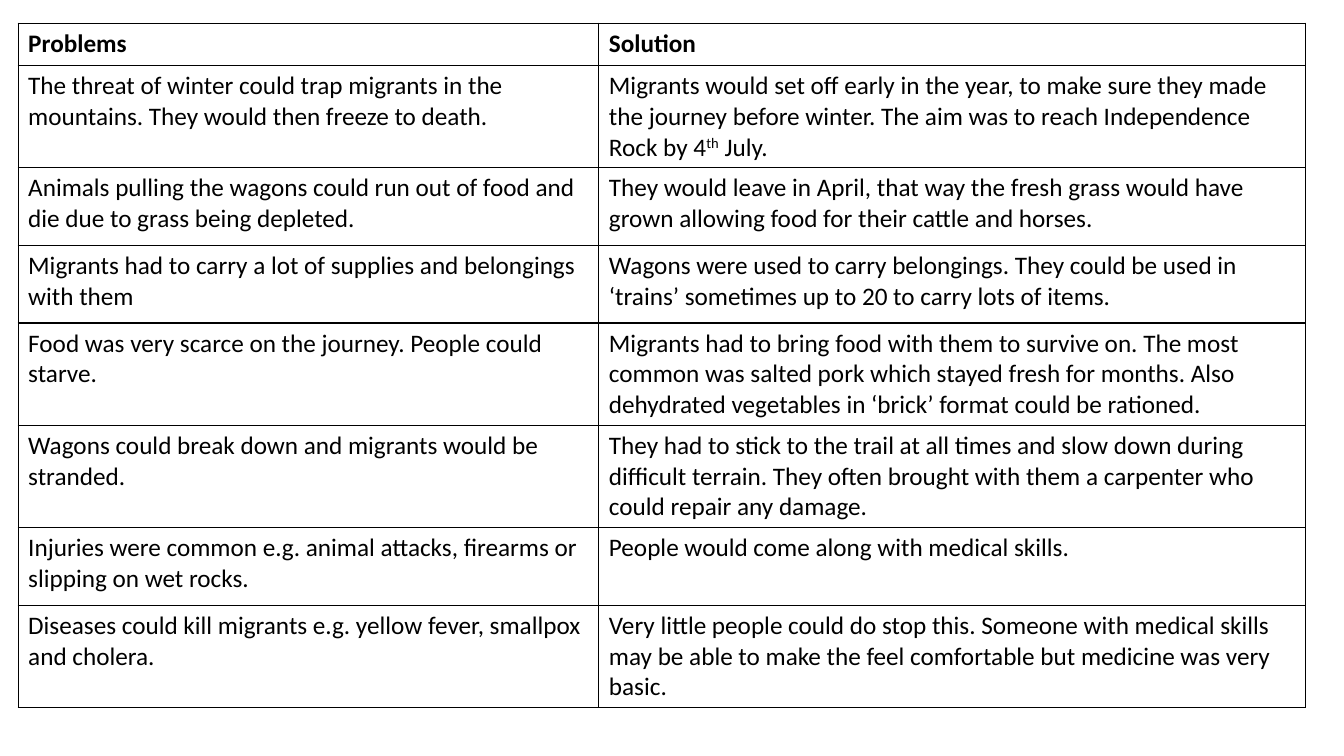
from pptx import Presentation
from pptx.dml.color import RGBColor
from pptx.oxml import parse_xml
from pptx.oxml.ns import nsdecls
from pptx.util import Inches, Pt

HEADER = ("Problems", "Solution")
# A "^" on each side marks superscript text.
JOURNEY = [
    ("The threat of winter could trap migrants in the mountains. They would then freeze to death.",
     "Migrants would set off early in the year, to make sure they made the journey before winter. "
     "The aim was to reach Independence Rock by 4^th^ July."),
    ("Animals pulling the wagons could run out of food and die due to grass being depleted.",
     "They would leave in April, that way the fresh grass would have grown allowing food for "
     "their cattle and horses."),
    ("Migrants had to carry a lot of supplies and belongings with them",
     "Wagons were used to carry belongings. They could be used in ‘trains’ sometimes up to 20 "
     "to carry lots of items."),
    ("Food was very scarce on the journey. People could starve.",
     "Migrants had to bring food with them to survive on. The most common was salted pork which "
     "stayed fresh for months. Also dehydrated vegetables in ‘brick’ format could be rationed."),
    ("Wagons could break down and migrants would be stranded.",
     "They had to stick to the trail at all times and slow down during difficult terrain. They "
     "often brought with them a carpenter who could repair any damage."),
    ("Injuries were common e.g. animal attacks, firearms or slipping on wet rocks.",
     "People would come along with medical skills."),
    ("Diseases could kill migrants e.g. yellow fever, smallpox and cholera.",
     "Very little people could do stop this. Someone with medical skills may be able to make the "
     "feel comfortable but medicine was very basic."),
]
BLACK, WHITE = "000000", "FFFFFF"
LEFT, TOP = 0.18, 0.23
COLUMN_WIDTHS = (5.76, 7.01)
HEADER_HEIGHT, ROW_HEIGHT = 0.42, 0.77
TEXT_FORMAT = {"name": "Calibri", "size": Pt(18)}


def color(hex_value):
    return RGBColor.from_string(hex_value)


def add_borders(cell):
    properties = cell._tc.get_or_add_tcPr()
    for side in ("lnL", "lnR", "lnT", "lnB"):
        properties.append(parse_xml(
            f'<a:{side} {nsdecls("a")} w="{Pt(1)}"><a:solidFill>'
            f'<a:srgbClr val="{BLACK}"/></a:solidFill></a:{side}>'))


def write_cell(cell, text, bold):
    add_borders(cell)
    cell.fill.solid()
    cell.fill.fore_color.rgb = color(WHITE)
    paragraph = cell.text_frame.paragraphs[0]
    for index, part in enumerate(text.split("^")):
        run = paragraph.add_run()
        run.text = part
        for name, value in {**TEXT_FORMAT, "bold": bold}.items():
            setattr(run.font, name, value)
        run.font.color.rgb = color(BLACK)
        if index % 2:
            run._r.get_or_add_rPr().set("baseline", "30000")


def main():
    presentation = Presentation()
    presentation.slide_width, presentation.slide_height = Inches(13.33), Inches(7.5)
    slide = presentation.slides.add_slide(presentation.slide_layouts[6])

    rows = [HEADER, *JOURNEY]
    heights = [HEADER_HEIGHT] + [ROW_HEIGHT] * len(JOURNEY)
    table = slide.shapes.add_table(
        len(rows), len(HEADER), Inches(LEFT), Inches(TOP),
        Inches(sum(COLUMN_WIDTHS)), Inches(sum(heights))).table
    table.horz_banding = False
    for column, width in zip(table.columns, COLUMN_WIDTHS):
        column.width = Inches(width)
    for row, height, texts in zip(table.rows, heights, rows):
        row.height = Inches(height)
        for cell, text in zip(row.cells, texts):
            write_cell(cell, text, bold=texts is HEADER)

    presentation.save("out.pptx")


if __name__ == "__main__":
    main()
